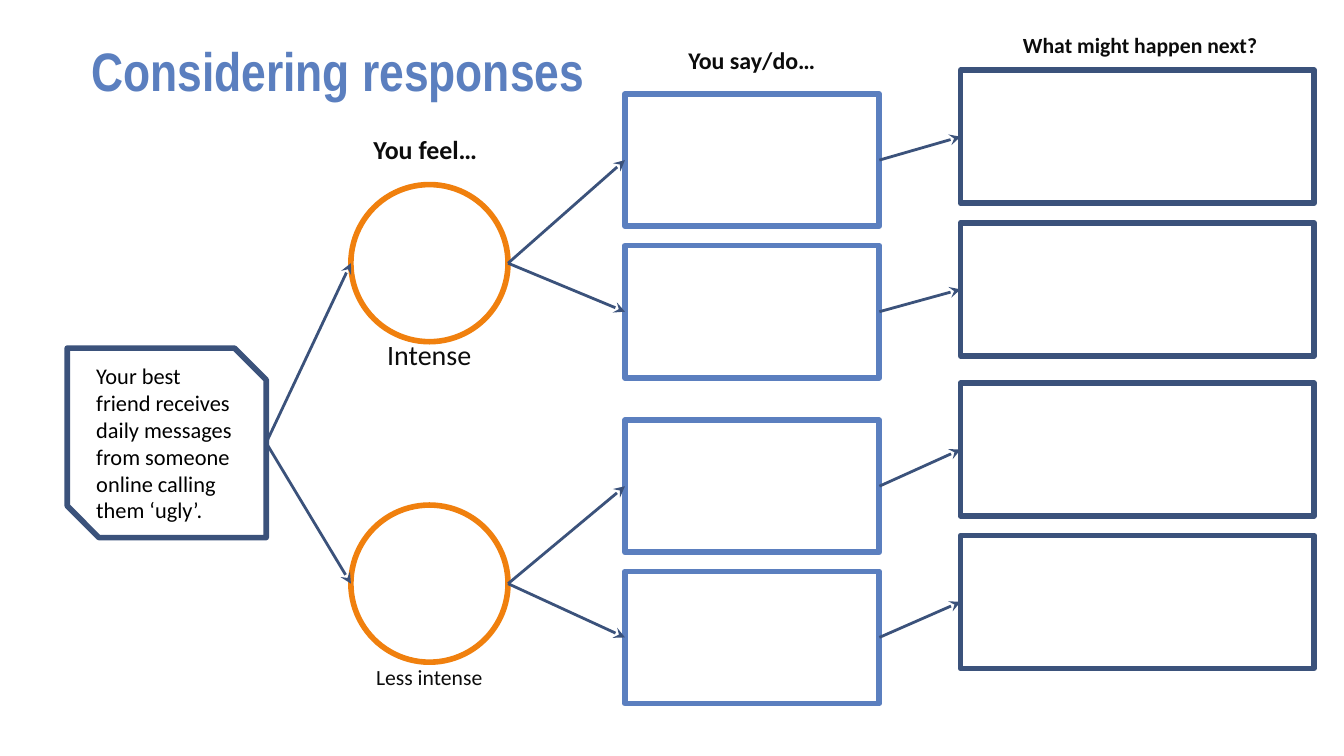
from lxml import etree
from pptx import Presentation
from pptx.dml.color import RGBColor
from pptx.enum.shapes import MSO_CONNECTOR, MSO_SHAPE
from pptx.enum.text import MSO_ANCHOR, PP_ALIGN
from pptx.oxml.ns import qn
from pptx.util import Pt

LEFT, CENTER = PP_ALIGN.LEFT, PP_ALIGN.CENTER
TOP, MIDDLE = MSO_ANCHOR.TOP, MSO_ANCHOR.MIDDLE
RECTANGLE, OVAL = MSO_SHAPE.RECTANGLE, MSO_SHAPE.OVAL
SNIPPED = MSO_SHAPE.SNIP_2_DIAG_RECTANGLE
STRAIGHT = MSO_CONNECTOR.STRAIGHT
NAVY, BLUE, ORANGE = "3B527B", "5B7FBF", "F0800E"

presentation = Presentation()
presentation.slide_width, presentation.slide_height = Pt(720), Pt(405)
slide = presentation.slides.add_slide(presentation.slide_layouts[5])


def write(shape, text, size, font="Calibri", color="0C0C0C", bold=False,
          align=CENTER, anchor=TOP, spacing=0.9, inset=(5, 3)):
    frame = shape.text_frame
    frame.word_wrap = True
    frame.vertical_anchor = anchor
    frame.margin_left = frame.margin_right = Pt(inset[0])
    frame.margin_top = frame.margin_bottom = Pt(inset[1])
    paragraph = frame.paragraphs[0]
    paragraph.alignment = align
    paragraph.line_spacing = spacing
    paragraph.space_before = Pt(0)
    run = paragraph.add_run()
    run.text = text
    run.font.name, run.font.size, run.font.bold = font, Pt(size), bold
    run.font.color.rgb = RGBColor.from_string(color)


def add_outline(kind, left, top, width, height, color):
    shape = slide.shapes.add_shape(kind, Pt(left), Pt(top), Pt(width), Pt(height))
    shape.shadow.inherit = False
    shape.fill.background()
    shape.line.color.rgb = RGBColor.from_string(color)
    shape.line.width = Pt(3)
    return shape


title = slide.shapes.title
title.left, title.top, title.width, title.height = Pt(43.9), Pt(15.8), Pt(631.4), Pt(48.2)
write(title, "Considering responses", 29, font="Arial Narrow", color=BLUE,
      bold=True, align=LEFT, anchor=MIDDLE)

situation = add_outline(SNIPPED, 36, 186.5, 106.6, 101.5, NAVY)
situation.adjustments[0], situation.adjustments[1] = 0, 0.167
write(situation, "Your best friend receives daily messages from someone online calling them ‘ugly’.",
      12, color="000000", align=LEFT, anchor=MIDDLE, spacing=1.0, inset=(7.2, 7.2))

feelings = [add_outline(OVAL, 188, top, 84.2, 84.2, ORANGE) for top in (98.9, 270.6)]
actions = [add_outline(RECTANGLE, 334.8, top, 136.3, 70.8, BLUE)
           for top in (50.4, 131.6, 225.1, 306.1)]
outcomes = [add_outline(RECTANGLE, 514.6, top, 189.4, 71.3, NAVY)
            for top in (37.6, 119.4, 205.2, 286.8)]

links = [(situation, feeling) for feeling in feelings]
links += [(feelings[index // 2], action) for index, action in enumerate(actions)]
links += list(zip(actions, outcomes))
for source, target in links:
    arrow = slide.shapes.add_connector(
        STRAIGHT, source.left + source.width, source.top + source.height // 2,
        target.left, target.top + target.height // 2)
    arrow.line.color.rgb = RGBColor.from_string(NAVY)
    arrow.line.width = Pt(1.5)
    etree.SubElement(arrow.line._get_or_add_ln(), qn("a:tailEnd"), type="stealth")
    etree.SubElement(arrow._element.spPr, qn("a:effectLst"))

labels = [
    ("You feel…", 195.1, 70.6, 69.8, 30.2, dict(size=13.9, bold=True, align=LEFT)),
    ("Intense", 195.1, 182.9, 69.8, 18.7, dict(size=15, spacing=0.7)),
    ("Less intense", 195.1, 354.2, 69.8, 18.7, dict(size=11.6)),
    ("You say/do…", 360.7, 23, 84.2, 23.8, dict(size=12.8, bold=True)),
    ("What might happen next?", 541.4, 15.8, 139, 18.7, dict(size=11.6, bold=True)),
]
for text, left, top, width, height, style in labels:
    label = slide.shapes.add_textbox(Pt(left), Pt(top), Pt(width), Pt(height))
    write(label, text, **style)

presentation.save("out.pptx")
